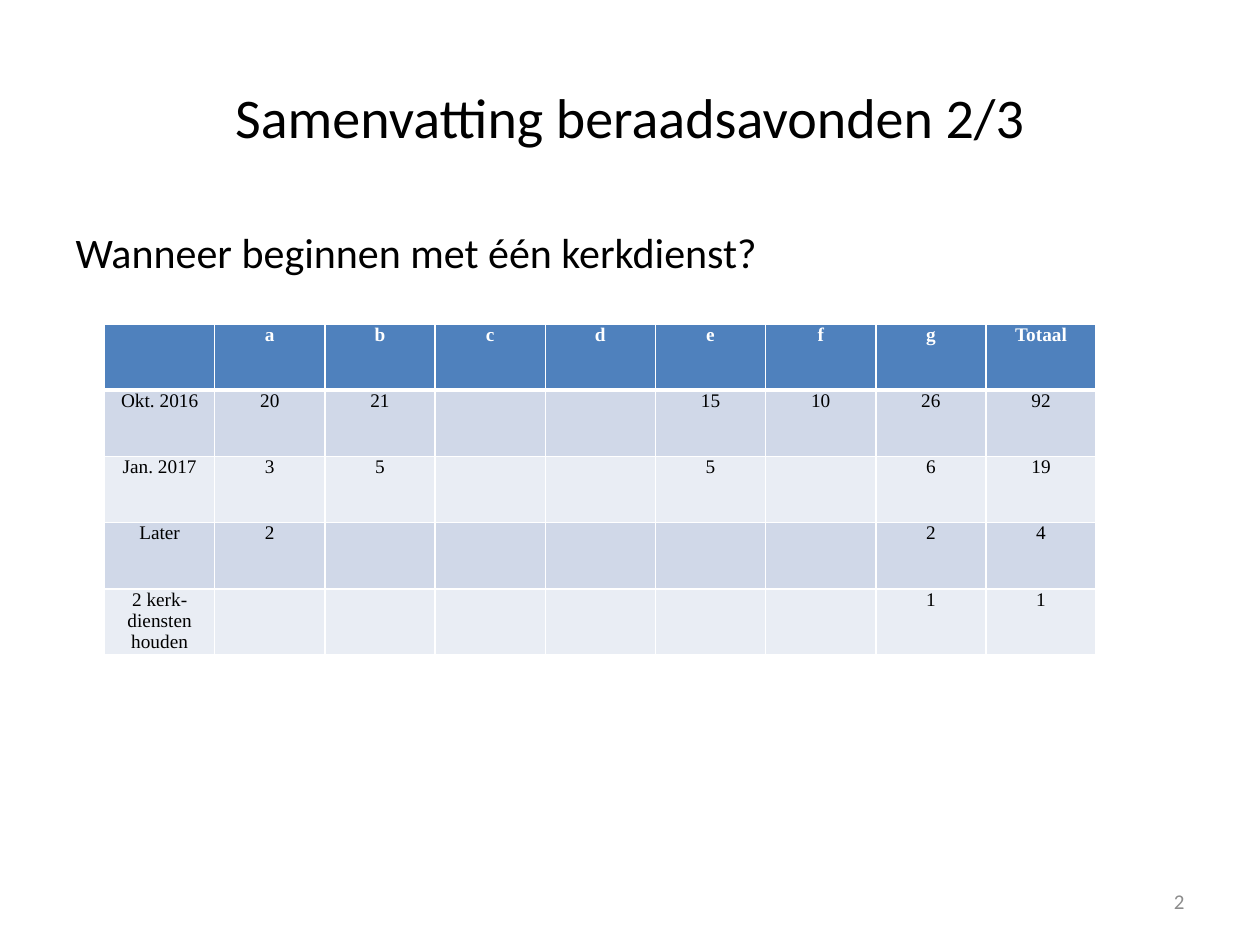
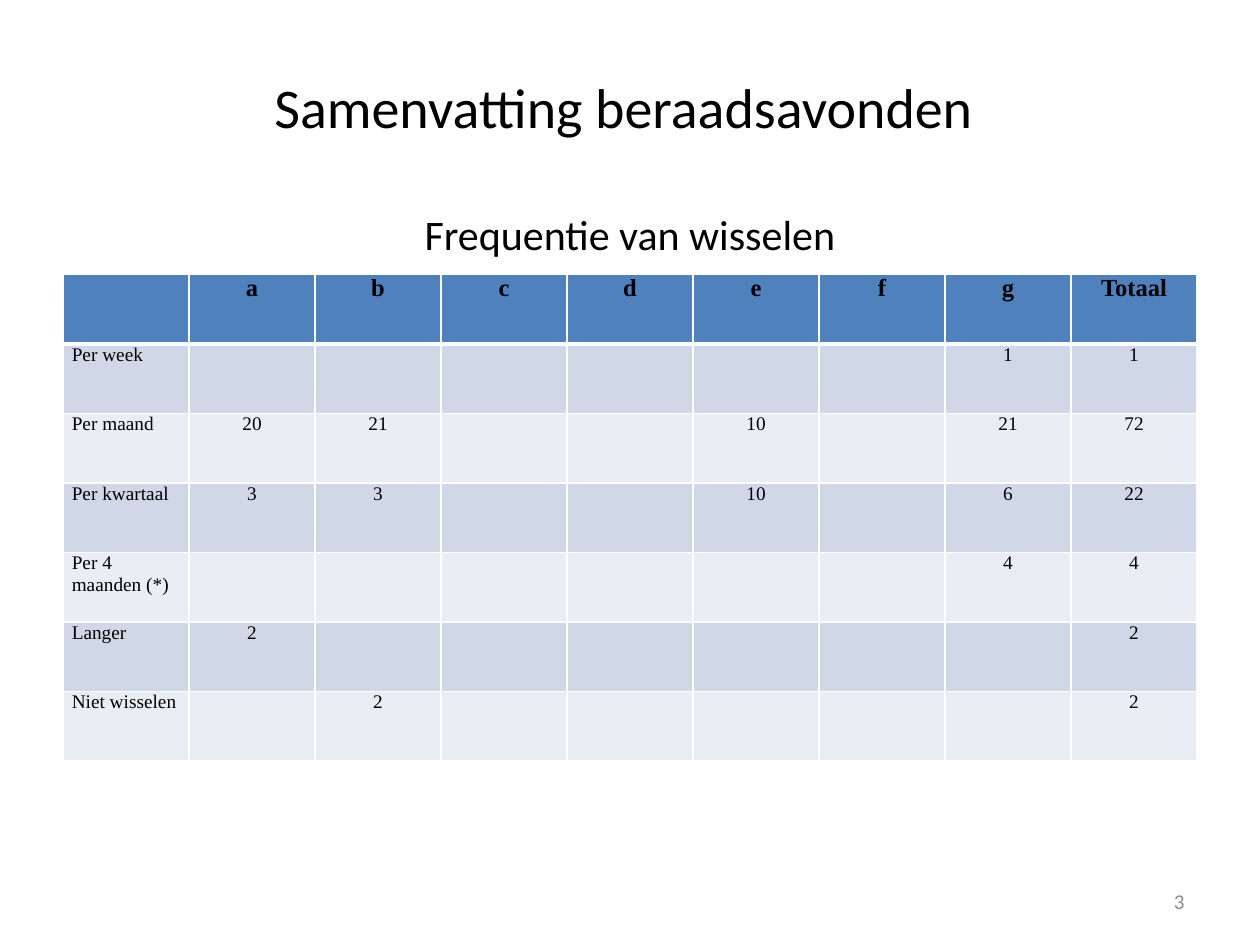
"""Build two slides that summarise the votes of the consultation evenings."""
import lxml.etree
import pptx
import pptx.dml.color
import pptx.enum.text
import pptx.oxml.ns
import pptx.util

COLOURS = {
    "text": "000000",
    "white": "FFFFFF",
    "header": "4F81BD",
    "odd_row": "D0D8E8",
    "even_row": "E9EDF4",
    "page_number": "8C8C8C",
}
HEADING_FONT = "Calibri"
TABLE_FONT = "Times New Roman"
TITLE_SIZE, SUBTITLE_SIZE, CELL_SIZE, PAGE_SIZE = 32, 24, 11, 12
COLUMN = pptx.util.Inches(10) // 20
ROW = pptx.util.Inches(7.5) // 30
PAGE_NUMBER_BOX = (14.34, 27.8, 4.66, 1.6)
ALIGN = pptx.enum.text.PP_ALIGN
MIDDLE = pptx.enum.text.MSO_ANCHOR.MIDDLE

HEADINGS = ["", "a", "b", "c", "d", "e", "f", "g", "Totaal"]
START_VOTES = [
    ["Okt. 2016", 20, 21, "", "", 15, 10, 26, 92],
    ["Jan. 2017", 3, 5, "", "", 5, "", 6, 19],
    ["Later", 2, "", "", "", "", "", 2, 4],
    ["2 kerk-diensten houden", "", "", "", "", "", "", 1, 1],
]
FREQUENCY_VOTES = [
    ["Per week", "", "", "", "", "", "", 1, 1],
    ["Per maand", 20, 21, "", "", 10, "", 21, 72],
    ["Per kwartaal", 3, 3, "", "", 10, "", 6, 22],
    ["Per 4 maanden (*)", "", "", "", "", "", "", 4, 4],
    ["Langer", 2, "", "", "", "", "", "", 2],
    ["Niet wisselen", "", 2, "", "", "", "", "", 2],
]


def to_lengths(box):
    """Turn a box in grid columns and rows into lengths."""
    left, top, width, height = box
    return [round(value) for value in (left * COLUMN, top * ROW, width * COLUMN, height * ROW)]


def place(shape, box):
    """Move a shape to a box on the grid."""
    shape.left, shape.top, shape.width, shape.height = to_lengths(box)


def format_paragraph(paragraph, size, font=HEADING_FONT, colour="text", alignment=None, bold=False):
    """Set the font and alignment of a whole paragraph."""
    paragraph.font.name = font
    paragraph.font.size = pptx.util.Pt(size)
    paragraph.font.bold = bold
    paragraph.font.color.rgb = pptx.dml.color.RGBColor.from_string(COLOURS[colour])
    paragraph.alignment = alignment


def fill_title(slide, box, title, subtitle=None):
    """Write the centred title and, further down, an optional subtitle."""
    place(slide.shapes.title, box)
    frame = slide.shapes.title.text_frame
    frame.auto_size = pptx.enum.text.MSO_AUTO_SIZE.NONE
    frame.vertical_anchor = MIDDLE
    frame.text = title
    format_paragraph(frame.paragraphs[0], TITLE_SIZE, alignment=ALIGN.CENTER)
    if subtitle:
        paragraph = frame.add_paragraph()
        paragraph.text = subtitle
        paragraph.space_before = pptx.util.Pt(39)
        format_paragraph(paragraph, SUBTITLE_SIZE, alignment=ALIGN.CENTER)


def fill_body(slide, box, question):
    """Write the question in the body placeholder without a bullet."""
    body = slide.placeholders[1]
    place(body, box)
    body.text_frame.auto_size = pptx.enum.text.MSO_AUTO_SIZE.NONE
    body.text_frame.text = question
    paragraph = body.text_frame.paragraphs[0]
    format_paragraph(paragraph, SUBTITLE_SIZE)
    properties = paragraph._p.get_or_add_pPr()
    lxml.etree.SubElement(properties, pptx.oxml.ns.qn("a:buNone"))


def add_page_number(slide, number):
    """Add the grey page number at the lower right."""
    frame = slide.shapes.add_textbox(*to_lengths(PAGE_NUMBER_BOX)).text_frame
    frame.word_wrap = True
    frame.vertical_anchor = MIDDLE
    frame.text = str(number)
    format_paragraph(frame.paragraphs[0], PAGE_SIZE, colour="page_number", alignment=ALIGN.RIGHT)


def set_borders(cell, row_index):
    """Draw white cell borders, thicker below the header."""
    properties = cell._tc.get_or_add_tcPr()
    widths = {"L": 1, "R": 1, "T": 3 if row_index == 1 else 1, "B": 3 if row_index == 0 else 1}
    for position, (side, width) in enumerate(widths.items()):
        line = lxml.etree.Element(pptx.oxml.ns.qn(f"a:ln{side}"), w=str(pptx.util.Pt(width)))
        fill = lxml.etree.SubElement(line, pptx.oxml.ns.qn("a:solidFill"))
        lxml.etree.SubElement(fill, pptx.oxml.ns.qn("a:srgbClr"), val=COLOURS["white"])
        properties.insert(position, line)


def add_vote_table(slide, box, votes, header_size, header_colour, label_alignment):
    """Add a banded table of votes with equal rows and columns."""
    rows = [HEADINGS] + votes
    table = slide.shapes.add_table(len(rows), len(HEADINGS), *to_lengths(box)).table
    for row_index, values in enumerate(rows):
        is_header = row_index == 0
        fill_name = "header" if is_header else "odd_row" if row_index % 2 else "even_row"
        for column_index, value in enumerate(values):
            cell = table.cell(row_index, column_index)
            cell.margin_left = cell.margin_right = pptx.util.Inches(0.07)
            cell.margin_top = cell.margin_bottom = 0
            cell.fill.solid()
            cell.fill.fore_color.rgb = pptx.dml.color.RGBColor.from_string(COLOURS[fill_name])
            set_borders(cell, row_index)
            cell.text = str(value)
            format_paragraph(
                cell.text_frame.paragraphs[0],
                header_size if is_header else CELL_SIZE,
                TABLE_FONT,
                header_colour if is_header else "text",
                ALIGN.CENTER if column_index else label_alignment,
                is_header,
            )


def add_start_slide(presentation):
    """Add the slide on when to begin with one service."""
    slide = presentation.slides.add_slide(presentation.slide_layouts[1])
    fill_title(slide, (1, 1.2, 18, 5), "Samenvatting beraadsavonden 2/3")
    fill_body(slide, (1, 7, 18, 19.8), "Wanneer beginnen met één kerkdienst?")
    add_vote_table(slide, (1.66, 10.28, 15.74, 10.52), START_VOTES, 11, "white", ALIGN.CENTER)
    add_page_number(slide, 2)


def add_frequency_slide(presentation):
    """Add the slide on how often to alternate."""
    slide = presentation.slides.add_slide(presentation.slide_layouts[5])
    fill_title(slide, (1, 1.2, 18, 8.12), "Samenvatting beraadsavonden ", "Frequentie van wisselen")
    add_vote_table(slide, (1, 8.72, 18, 15.44), FREQUENCY_VOTES, 14, "text", ALIGN.LEFT)
    add_page_number(slide, 3)


def main():
    """Build and save the presentation."""
    presentation = pptx.Presentation()
    presentation.slide_width = 20 * COLUMN
    presentation.slide_height = 30 * ROW
    add_start_slide(presentation)
    add_frequency_slide(presentation)
    presentation.save("out.pptx")


if __name__ == "__main__":
    main()
